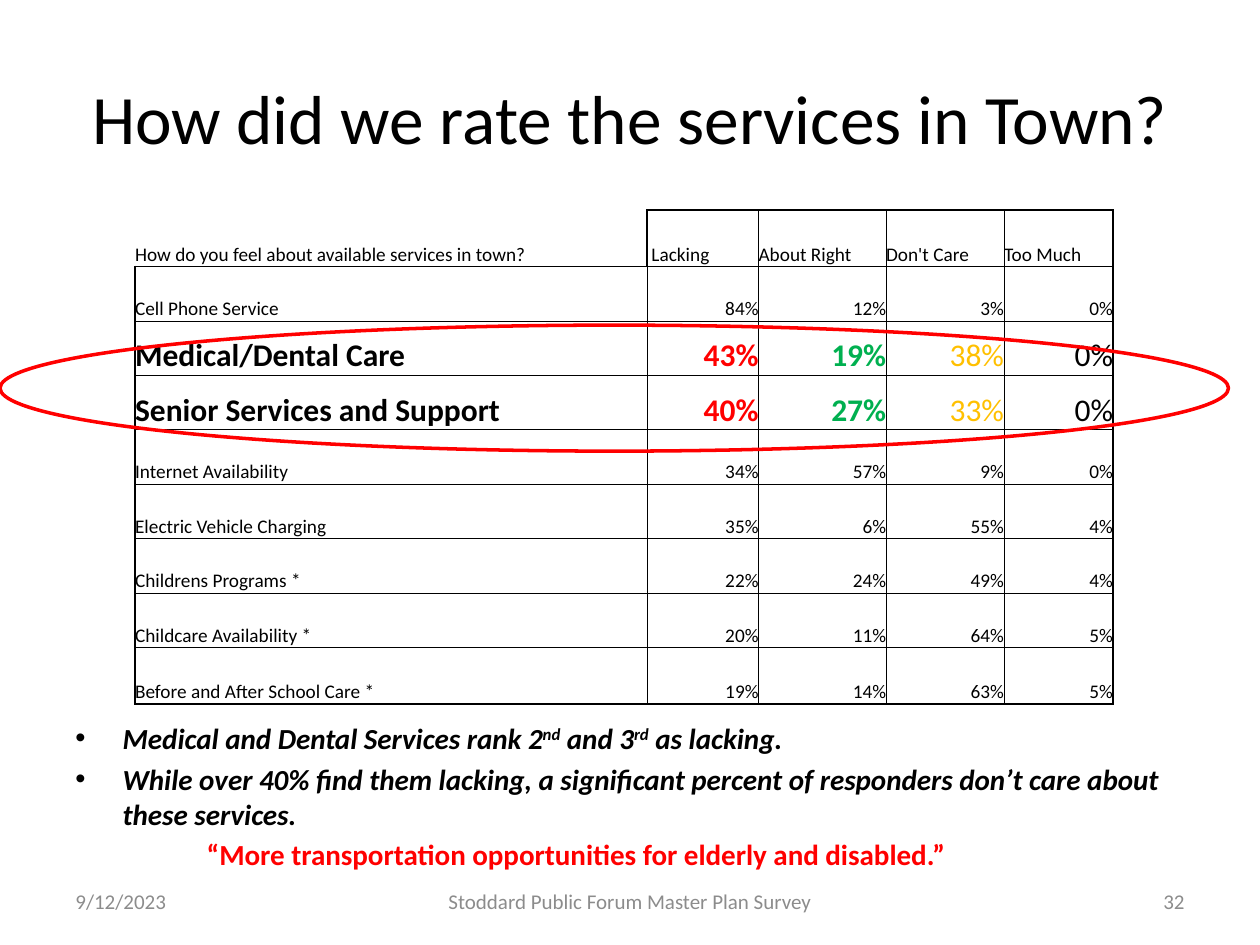
"""Build the town services survey slide with its ratings table and findings."""
from dataclasses import dataclass
from typing import Optional

from lxml.etree import SubElement
from pptx import Presentation
from pptx.dml.color import RGBColor
from pptx.enum.shapes import MSO_SHAPE as Shape
from pptx.enum.text import MSO_ANCHOR as Anchor, PP_ALIGN as Align
from pptx.oxml import parse_xml
from pptx.oxml.ns import nsdecls, qn
from pptx.util import Pt

COLORS = {
    "ink": "000000",
    "red": "FF0000",
    "green": "00B050",
    "gold": "FFC000",
    "grey": "8C8C8C",
}
FONT = "Calibri"
THICK, THIN = 1, 0.5


@dataclass(frozen=True)
class Span:
    text: str
    size: float
    color: str = "ink"
    bold: bool = False
    italic: bool = False
    raised: bool = False


@dataclass(frozen=True)
class Box:
    left: float
    top: float
    width: float
    height: float


@dataclass(frozen=True)
class Rating:
    service: str
    shares: tuple[int, int, int, int]
    highlighted: bool = False


@dataclass(frozen=True)
class Finding:
    spans: tuple[Span, ...]
    margin: float
    hanging: float = 0


@dataclass(frozen=True)
class Caption:
    box: Box
    span: Span
    align: Align


HEADERS = ("How do you feel about available services in town?",
           " Lacking", "About Right", "Don't Care", "Too Much")
RATINGS = (
    Rating("Cell Phone Service", (84, 12, 3, 0)),
    Rating("Medical/Dental Care", (43, 19, 38, 0), True),
    Rating("Senior Services and Support", (40, 27, 33, 0), True),
    Rating("Internet Availability", (34, 57, 9, 0)),
    Rating("Electric Vehicle Charging", (35, 6, 55, 4)),
    Rating("Childrens Programs *", (22, 24, 49, 4)),
    Rating("Childcare Availability *", (20, 11, 64, 5)),
    Rating("Before and After School Care *", (19, 14, 63, 5)),
)
HIGHLIGHT_COLORS = ("ink", "red", "green", "gold", "ink")
HIGHLIGHT_BOLD = (True, True, True, False, False)
COLUMN_WIDTHS = (35.4, 292.6, 63.7, 72.9, 67.4, 62.3)
ROW_HEIGHTS = (32.3, *[31.1] * 7, 32.3)
TABLE_BOX = Box(41.8, 120, sum(COLUMN_WIDTHS), sum(ROW_HEIGHTS))
FINDINGS_BOX = Box(36, 408.2, 642.2, 90)
FINDING_SIZE = 16.6


def finding_span(text: str, raised: bool = False) -> Span:
    """Return a bold italic piece of a finding."""
    return Span(text, FINDING_SIZE, bold=True, italic=True, raised=raised)


FINDINGS = (
    Finding((finding_span("Medical and Dental Services rank 2"), finding_span("nd", True),
             finding_span(" and 3"), finding_span("rd", True),
             finding_span(" as lacking.")), 27, 27),
    Finding((finding_span("While over 40% find them lacking, a significant percent of "
                          "responders don’t care about these services."),), 27, 27),
    Finding((Span("“More transportation opportunities for elderly and disabled.”",
                  FINDING_SIZE, "red", True),), 75),
)
CAPTIONS = (
    Caption(Box(36, 21.6, 648, 90),
            Span("How did we rate the services in Town?", 39.6), Align.CENTER),
    Caption(Box(36, 500.5, 168, 28.8), Span("9/12/2023", 12, "grey"), Align.LEFT),
    Caption(Box(516, 500.5, 168, 28.8), Span("32", 12, "grey"), Align.RIGHT),
    Caption(Box(246, 500.5, 228, 28.8),
            Span("Stoddard Public Forum Master Plan Survey", 12, "grey"), Align.CENTER),
)


def place(box: Box) -> tuple[Pt, Pt, Pt, Pt]:
    """Convert a box to lengths."""
    return Pt(box.left), Pt(box.top), Pt(box.width), Pt(box.height)


def add_span(paragraph, span: Span) -> None:
    """Append one formatted run."""
    run = paragraph.add_run()
    run.text = span.text
    font = run.font
    font.name, font.size = FONT, Pt(span.size)
    font.bold, font.italic = span.bold, span.italic
    font.color.rgb = RGBColor.from_string(COLORS[span.color])
    if span.raised:
        run._r.get_or_add_rPr().set("baseline", "30000")


def add_caption(slide, caption: Caption) -> None:
    """Add one line of text, centred vertically."""
    frame = slide.shapes.add_textbox(*place(caption.box)).text_frame
    frame.word_wrap = True
    frame.vertical_anchor = Anchor.MIDDLE
    paragraph = frame.paragraphs[0]
    paragraph.alignment = caption.align
    add_span(paragraph, caption.span)


def border_widths(row: int, column: int) -> tuple[Optional[float], ...]:
    """Return left, right, top and bottom border widths of a cell."""
    last_row, last_column = len(RATINGS), len(HEADERS)
    if column == 0:
        return None, THICK if row else None, None, None
    right = THICK if column == last_column or (row, column) == (0, 1) else THIN
    bottom = THICK if row in (0, last_row) else THIN
    if (row, column) == (0, 1):
        return None, right, None, bottom
    left = THICK if column == 1 or (row, column) == (0, 2) else THIN
    return left, right, THICK if row < 2 else THIN, bottom


def set_borders(cell, widths: tuple[Optional[float], ...]) -> None:
    """Draw the four sides of a cell, leaving out those without a width."""
    properties = cell._tc.get_or_add_tcPr()
    for index, (side, width) in enumerate(zip("LRTB", widths)):
        line = parse_xml(f"<a:ln{side} {nsdecls('a')}/>")
        if width is None:
            SubElement(line, qn("a:noFill"))
        else:
            line.set("w", str(Pt(width)))
            fill = SubElement(line, qn("a:solidFill"))
            SubElement(fill, qn("a:srgbClr")).set("val", COLORS["ink"])
        properties.insert(index, line)


def rating_spans(rating: Rating) -> list[Span]:
    """Return the texts of one table row."""
    texts = (rating.service, *(f"{share}%" for share in rating.shares))
    if not rating.highlighted:
        return [Span(text, 11) for text in texts]
    return [Span(text, 18, color, bold)
            for text, color, bold in zip(texts, HIGHLIGHT_COLORS, HIGHLIGHT_BOLD)]


def add_ratings(slide) -> None:
    """Add the table of service ratings."""
    rows = [[Span(header, 11) for header in HEADERS], *map(rating_spans, RATINGS)]
    ratings = slide.shapes.add_table(len(rows), len(COLUMN_WIDTHS), *place(TABLE_BOX)).table
    ratings.first_row = ratings.horz_banding = False
    for column, width in zip(ratings.columns, COLUMN_WIDTHS):
        column.width = Pt(width)
    for r, (spans, height) in enumerate(zip(rows, ROW_HEIGHTS)):
        ratings.rows[r].height = Pt(height)
        for c, span in enumerate([None, *spans]):
            cell = ratings.cell(r, c)
            cell.fill.background()
            set_borders(cell, border_widths(r, c))
            cell.margin_left = cell.margin_right = cell.margin_top = cell.margin_bottom = 0
            cell.vertical_anchor = Anchor.BOTTOM
            if span:
                paragraph = cell.text_frame.paragraphs[0]
                paragraph.alignment = Align.RIGHT if r and c > 1 else Align.LEFT
                add_span(paragraph, span)


def add_findings(slide) -> None:
    """Add the bulleted findings and the quotation."""
    frame = slide.shapes.add_textbox(*place(FINDINGS_BOX)).text_frame
    frame.word_wrap = True
    for index, finding in enumerate(FINDINGS):
        paragraph = frame.add_paragraph() if index else frame.paragraphs[0]
        paragraph.space_before = Pt(3.3)
        properties = paragraph._p.get_or_add_pPr()
        properties.set("marL", str(Pt(finding.margin)))
        properties.set("indent", str(-Pt(finding.hanging)))
        if finding.hanging:
            SubElement(properties, qn("a:buFont")).set("typeface", "Arial")
            SubElement(properties, qn("a:buChar")).set("char", "•")
        for span in finding.spans:
            add_span(paragraph, span)


def add_highlight(slide) -> None:
    """Circle the highlighted rows."""
    ring = slide.shapes.add_shape(Shape.OVAL, *place(Box(0, 185.8, 702, 72)))
    ring.shadow.inherit = False
    ring.fill.background()
    ring.line.color.rgb = RGBColor.from_string(COLORS["red"])
    ring.line.width = Pt(2)


def main() -> None:
    """Build and save the slide."""
    deck = Presentation()
    deck.slide_width, deck.slide_height = Pt(720), Pt(540)
    slide = deck.slides.add_slide(deck.slide_layouts[6])
    title, *footers = CAPTIONS
    add_caption(slide, title)
    add_ratings(slide)
    add_findings(slide)
    add_highlight(slide)
    for footer in footers:
        add_caption(slide, footer)
    deck.save("out.pptx")


if __name__ == "__main__":
    main()
